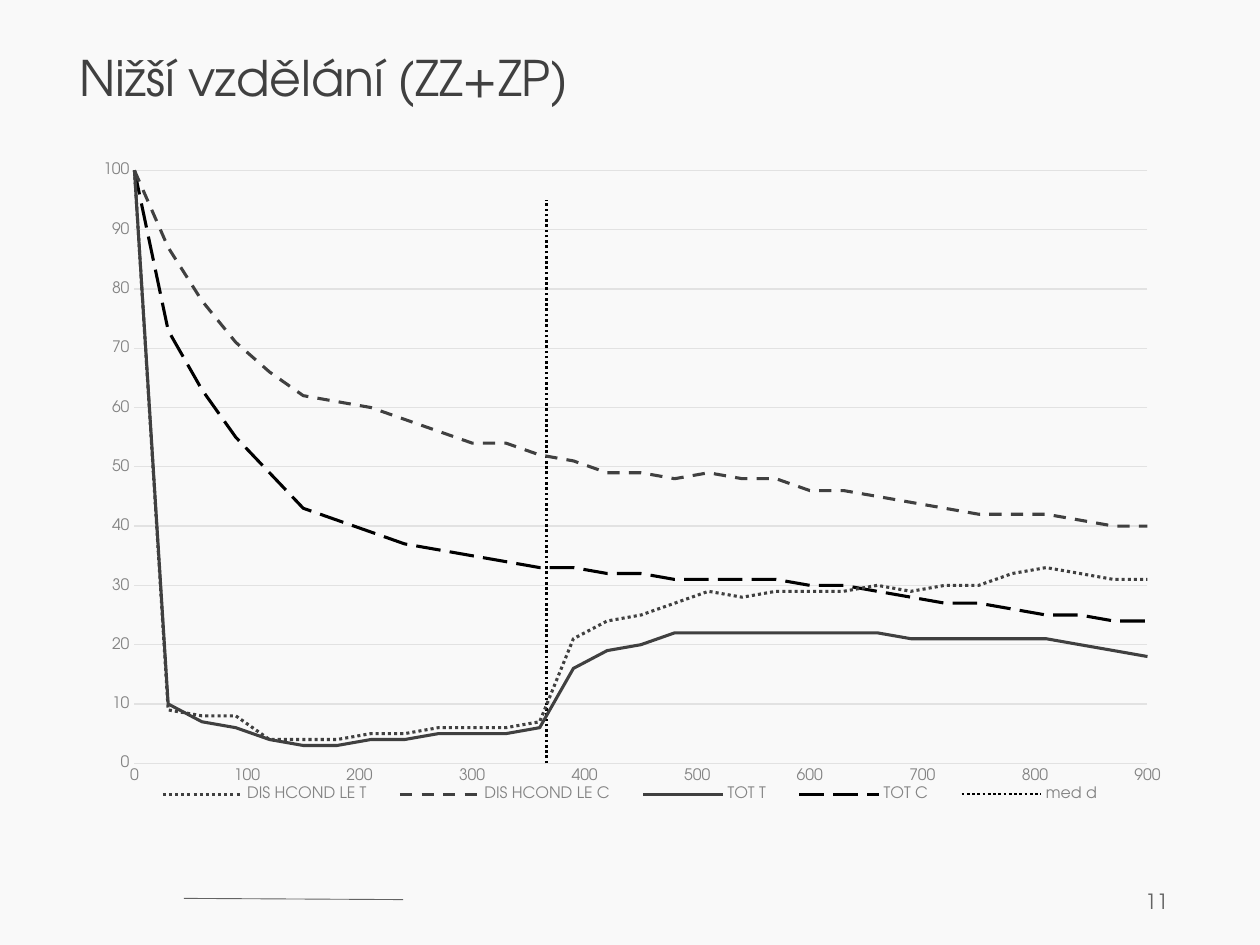
from dataclasses import dataclass
from typing import Optional

from lxml.etree import SubElement
from pptx import Presentation
from pptx.chart.data import XyChartData
from pptx.dml.color import RGBColor
from pptx.enum.chart import XL_CHART_TYPE, XL_LEGEND_POSITION, XL_TICK_MARK
from pptx.enum.dml import MSO_LINE
from pptx.enum.shapes import MSO_CONNECTOR
from pptx.enum.text import MSO_ANCHOR, PP_ALIGN
from pptx.oxml.ns import qn
from pptx.util import Inches, Pt


@dataclass(frozen=True)
class Theme:
    font: str = "TeX Gyre Adventor"
    background: str = "F9F9F9"
    text: str = "404040"
    muted: str = "636363"
    label: str = "838383"
    grid: str = "E2E2E2"
    black: str = "000000"
    title_size: float = 28
    number_size: float = 12
    chart_size: float = 10
    label_size: float = 9


@dataclass(frozen=True)
class Curve:
    name: str
    xs: list[int]
    ys: list[int]
    color: str
    dash: Optional[MSO_LINE] = None
    width: float = 1.75


THEME = Theme()
DAYS = list(range(0, 901, 30))
CURVES = [
    Curve("DIS HCOND LE T", DAYS,
          [100, 9, 8, 8, 4, 4, 4, 5, 5, 6, 6, 6, 7, 21, 24, 25, 27, 29, 28, 29, 29,
           29, 30, 29, 30, 30, 32, 33, 32, 31, 31], THEME.text, MSO_LINE.ROUND_DOT),
    Curve("DIS HCOND LE C", DAYS,
          [100, 87, 78, 71, 66, 62, 61, 60, 58, 56, 54, 54, 52, 51, 49, 49, 48, 49,
           48, 48, 46, 46, 45, 44, 43, 42, 42, 42, 41, 40, 40], THEME.text, MSO_LINE.DASH),
    Curve("TOT T", DAYS,
          [100, 10, 7, 6, 4, 3, 3, 4, 4, 5, 5, 5, 6, 16, 19, 20, 22, 22, 22, 22, 22,
           22, 22, 21, 21, 21, 21, 21, 20, 19, 18], THEME.text),
    Curve("TOT C", DAYS,
          [100, 73, 63, 55, 49, 43, 41, 39, 37, 36, 35, 34, 33, 33, 32, 32, 31, 31,
           31, 31, 30, 30, 29, 28, 27, 27, 26, 25, 25, 24, 24],
          THEME.black, MSO_LINE.LONG_DASH),
    Curve("med d", [366, 366], [0, 95], THEME.black, MSO_LINE.ROUND_DOT, 1.5),
]


def rgb(color: str) -> RGBColor:
    return RGBColor.from_string(color)


def style_font(font, size: float, color: str) -> None:
    font.name = THEME.font
    font.size = Pt(size)
    font.color.rgb = rgb(color)


def style_line(line, color: str, width: float, dash: Optional[MSO_LINE] = None) -> None:
    line.color.rgb = rgb(color)
    line.width = Pt(width)
    if dash is not None:
        line.dash_style = dash


def add_text(slide, text: str, *, left: float, top: float, width: float, height: float,
             size: float, color: str, align=PP_ALIGN.LEFT, anchor=MSO_ANCHOR.TOP,
             spacing: float = 1.0, inset: Optional[float] = None) -> None:
    sp = slide.shapes.add_textbox(Inches(left), Inches(top), Inches(width), Inches(height))
    tf = sp.text_frame
    tf.word_wrap = True
    tf.vertical_anchor = anchor
    if inset is not None:
        tf.margin_left = tf.margin_right = Inches(inset)
        tf.margin_top = tf.margin_bottom = Inches(inset)
    p = tf.paragraphs[0]
    p.alignment = align
    p.line_spacing = spacing
    r = p.add_run()
    r.text = text
    style_font(r.font, size, color)


def add_rule(slide, x1: float, y1: float, x2: float, y2: float) -> None:
    line = slide.shapes.add_connector(
        MSO_CONNECTOR.STRAIGHT, Inches(x1), Inches(y1), Inches(x2), Inches(y2))
    style_line(line.line, THEME.muted, 0.5)
    SubElement(line._element.spPr, qn("a:effectLst"))


def place(element, index: int, x: float, y: float, w: float, h: float,
          inner: bool = False) -> None:
    for old in element.findall(qn("c:layout")):
        element.remove(old)
    layout = SubElement(element, qn("c:layout"))
    element.insert(index, layout)
    manual = SubElement(layout, qn("c:manualLayout"))
    settings = [("layoutTarget", "inner")] if inner else []
    settings += [("xMode", "edge"), ("yMode", "edge"), ("x", x), ("y", y), ("w", w), ("h", h)]
    for tag, value in settings:
        SubElement(manual, qn(f"c:{tag}")).set("val", str(value))


def style_axis(axis, maximum: int, step: int, grid: bool) -> None:
    axis.minimum_scale = 0
    axis.maximum_scale = maximum
    axis.major_unit = step
    axis.major_tick_mark = axis.minor_tick_mark = XL_TICK_MARK.NONE
    axis.has_major_gridlines = grid
    style_font(axis.tick_labels.font, THEME.label_size, THEME.label)
    if grid:
        style_line(axis.major_gridlines.format.line, THEME.grid, 0.75)
        axis.format.line.fill.background()
    else:
        style_line(axis.format.line, THEME.grid, 0.75)


def add_curves(slide, curves: list[Curve]) -> None:
    data = XyChartData()
    for curve in curves:
        series = data.add_series(curve.name)
        for x, y in zip(curve.xs, curve.ys):
            series.add_data_point(x, y)
    chart = slide.shapes.add_chart(
        XL_CHART_TYPE.XY_SCATTER_LINES_NO_MARKERS,
        Inches(0.63), Inches(1.19), Inches(8.74), Inches(5.41), data).chart
    chart.has_title = False
    style_font(chart.font, THEME.chart_size, THEME.text)
    style_axis(chart.category_axis, 900, 100, grid=False)
    style_axis(chart.value_axis, 100, 10, grid=True)

    plot = chart.plots[0]
    plot.vary_by_categories = False
    for series, curve in zip(plot.series, curves):
        series.smooth = False
        style_line(series.format.line, curve.color, curve.width, curve.dash)

    chart.has_legend = True
    legend = chart.legend
    legend.position = XL_LEGEND_POSITION.BOTTOM
    legend.include_in_layout = False
    style_font(legend.font, THEME.label_size, THEME.label)
    place(chart._chartSpace.chart.plotArea, 0, 0.05, 0.03, 0.92, 0.87, inner=True)
    place(legend._element, 1, 0.05, 0.92, 0.9, 0.05)


def main() -> None:
    prs = Presentation()
    prs.slide_width, prs.slide_height = Inches(10), Inches(7.5)
    s = prs.slides.add_slide(prs.slide_layouts[6])
    s.background.fill.solid()
    s.background.fill.fore_color.rgb = rgb(THEME.background)

    add_rule(s, 1.46, 7.13, 3.2, 7.14)
    add_text(s, "11", left=7.12, top=6.95, width=2.25, height=0.4,
             size=THEME.number_size, color=THEME.muted,
             align=PP_ALIGN.RIGHT, anchor=MSO_ANCHOR.MIDDLE)
    add_text(s, "Nižší vzdělání (ZZ+ZP)", left=0.63, top=0.47, width=8.74, height=0.4,
             size=THEME.title_size, color=THEME.text, spacing=0.8, inset=0)
    add_curves(s, CURVES)
    prs.save("out.pptx")


if __name__ == "__main__":
    main()
